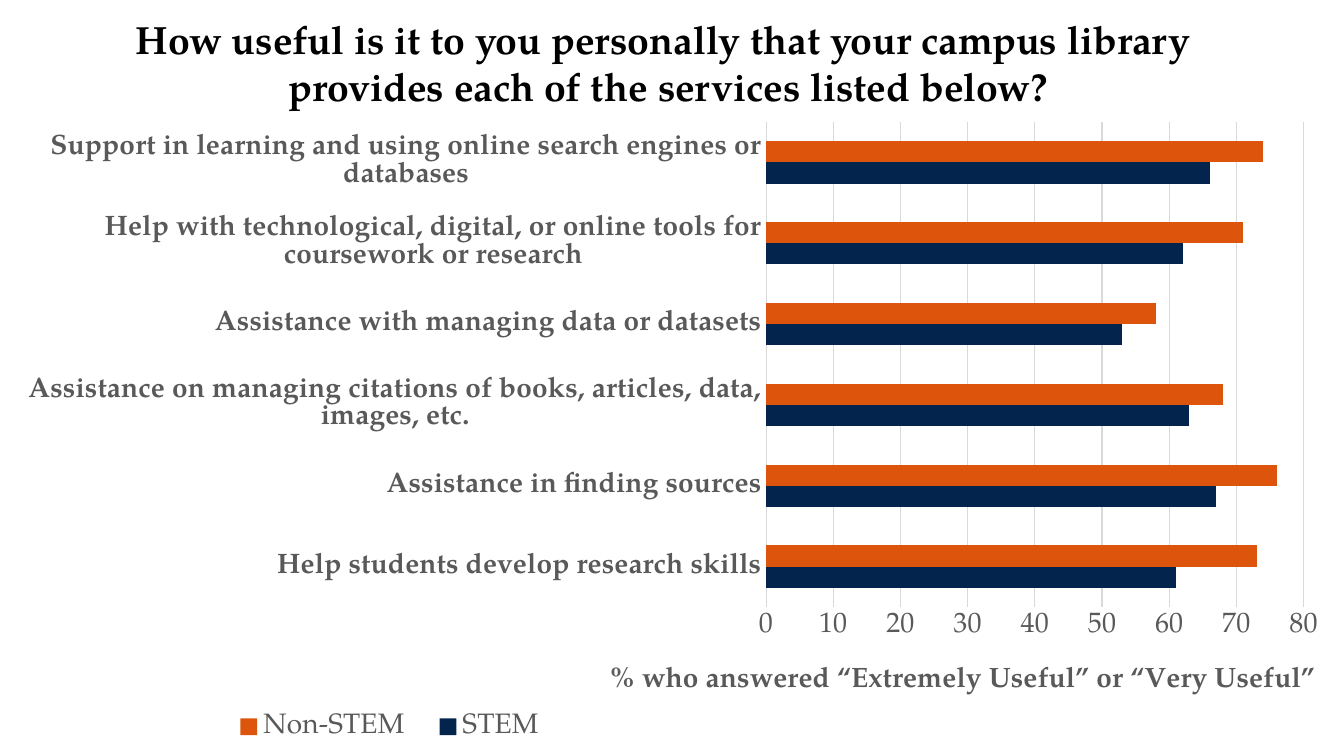
from pptx import Presentation
from pptx.chart.data import CategoryChartData
from pptx.dml.color import RGBColor
from pptx.enum.chart import XL_CHART_TYPE as ChartType
from pptx.enum.chart import XL_LEGEND_POSITION as LegendPosition
from pptx.enum.chart import XL_TICK_MARK as TickMark
from pptx.enum.text import PP_ALIGN as Align
from pptx.oxml import parse_xml
from pptx.oxml.ns import nsdecls, qn
from pptx.util import Inches, Pt

PX = Inches(1) / 100.8
SLIDE_WIDTH, SLIDE_HEIGHT = 1344, 756
FONT = "TeX Gyre Pagella"
BLACK = RGBColor(0x00, 0x00, 0x00)
GRAY = RGBColor(0x59, 0x59, 0x59)
LIGHT_GRAY = RGBColor(0xD9, 0xD9, 0xD9)
NAVY = RGBColor(0x03, 0x24, 0x4D)
ORANGE = RGBColor(0xDD, 0x55, 0x0C)

QUESTION = (
    "How useful is it to you personally that your campus library ",
    "provides each of the services listed below?",
)
AXIS_CAPTION = "% who answered “Extremely Useful” or “Very Useful”"
SERVICES = (
    ("Help students develop research skills", 61, 73),
    ("Assistance in finding sources", 67, 76),
    ("Assistance on managing citations of books, articles, data, images, etc.", 63, 68),
    ("Assistance with managing data or datasets", 53, 58),
    ("Help with technological, digital, or online tools for coursework or research", 62, 71),
    ("Support in learning and using online search engines or databases", 66, 74),
)
GROUPS = (("STEM", NAVY), ("Non-STEM", ORANGE))


def emu(*lengths):
    return [round(length * PX) for length in lengths]


def style(font, size, color, bold=False):
    font.name = FONT
    font.size = Pt(size)
    font.bold = bold
    font.color.rgb = color


def place(part, index, target=None, **fractions):
    for old in part.findall(qn("c:layout")):
        part.remove(old)
    inner = f'<c:layoutTarget val="{target}"/>' if target else ""
    modes = "".join(f'<c:{key}Mode val="edge"/>' for key in "xy")
    sizes = "".join(f'<c:{key} val="{value}"/>' for key, value in fractions.items())
    part.insert(index, parse_xml(
        f'<c:layout {nsdecls("c")}><c:manualLayout>{inner}{modes}{sizes}'
        "</c:manualLayout></c:layout>"
    ))


def add_question(slide, left, top, width, height):
    question = slide.shapes.add_textbox(*emu(left, top, width, height))
    frame = question.text_frame
    frame.word_wrap = True
    frame.text = "\n".join(QUESTION)
    for line in frame.paragraphs:
        line.alignment = Align.CENTER
        style(line.runs[0].font, 28, BLACK, bold=True)


def style_axes(chart):
    services = chart.category_axis
    services.major_tick_mark = services.minor_tick_mark = TickMark.NONE
    services.has_major_gridlines = False
    services.format.line.color.rgb = LIGHT_GRAY
    services.format.line.width = Pt(0.75)
    style(services.tick_labels.font, 20, GRAY, bold=True)

    percent = chart.value_axis
    percent.major_tick_mark = percent.minor_tick_mark = TickMark.NONE
    percent.minimum_scale, percent.maximum_scale, percent.major_unit = 0, 80, 10
    percent.format.line.fill.background()
    gridline = percent.major_gridlines.format.line
    gridline.color.rgb = LIGHT_GRAY
    gridline.width = Pt(0.75)
    style(percent.tick_labels.font, 20, GRAY)
    caption = percent.axis_title.text_frame
    caption.text = AXIS_CAPTION
    style(caption.paragraphs[0].runs[0].font, 20, GRAY, bold=True)


def add_usefulness_chart(slide, left, top, width, height):
    data = CategoryChartData()
    data.categories = [service[0] for service in SERVICES]
    for column, (group, _) in enumerate(GROUPS, start=1):
        data.add_series(group, [service[column] for service in SERVICES])
    chart = slide.shapes.add_chart(
        ChartType.BAR_CLUSTERED, *emu(left, top, width, height), data
    ).chart
    chart.has_title = False
    style(chart.font, 20, GRAY)
    style_axes(chart)

    bars = chart.plots[0]
    bars.vary_by_categories = False
    bars.gap_width = 182
    bars.overlap = 0
    for series, (_, color) in zip(bars.series, GROUPS):
        series.format.fill.solid()
        series.format.fill.fore_color.rgb = color

    chart.has_legend = True
    legend = chart.legend
    legend.position = LegendPosition.BOTTOM
    legend.include_in_layout = False
    style(legend.font, 20, GRAY)

    root = chart._chartSpace
    place(root.find(".//" + qn("c:plotArea")), 0, "inner", x=0.57, y=0.02, w=0.4, h=0.75)
    place(root.find(".//" + qn("c:valAx") + "/" + qn("c:title")), 1, x=0.45, y=0.85)
    place(root.find(".//" + qn("c:legend")), 1, x=0.16, y=0.92, w=0.26, h=0.07)


def main():
    deck = Presentation()
    deck.slide_width, deck.slide_height = emu(SLIDE_WIDTH, SLIDE_HEIGHT)
    slide = deck.slides.add_slide(deck.slide_layouts[6])
    add_usefulness_chart(slide, 0, 109, SLIDE_WIDTH, SLIDE_HEIGHT - 109)
    add_question(slide, 16, 10, 1304, 105)
    deck.save("out.pptx")


if __name__ == "__main__":
    main()
